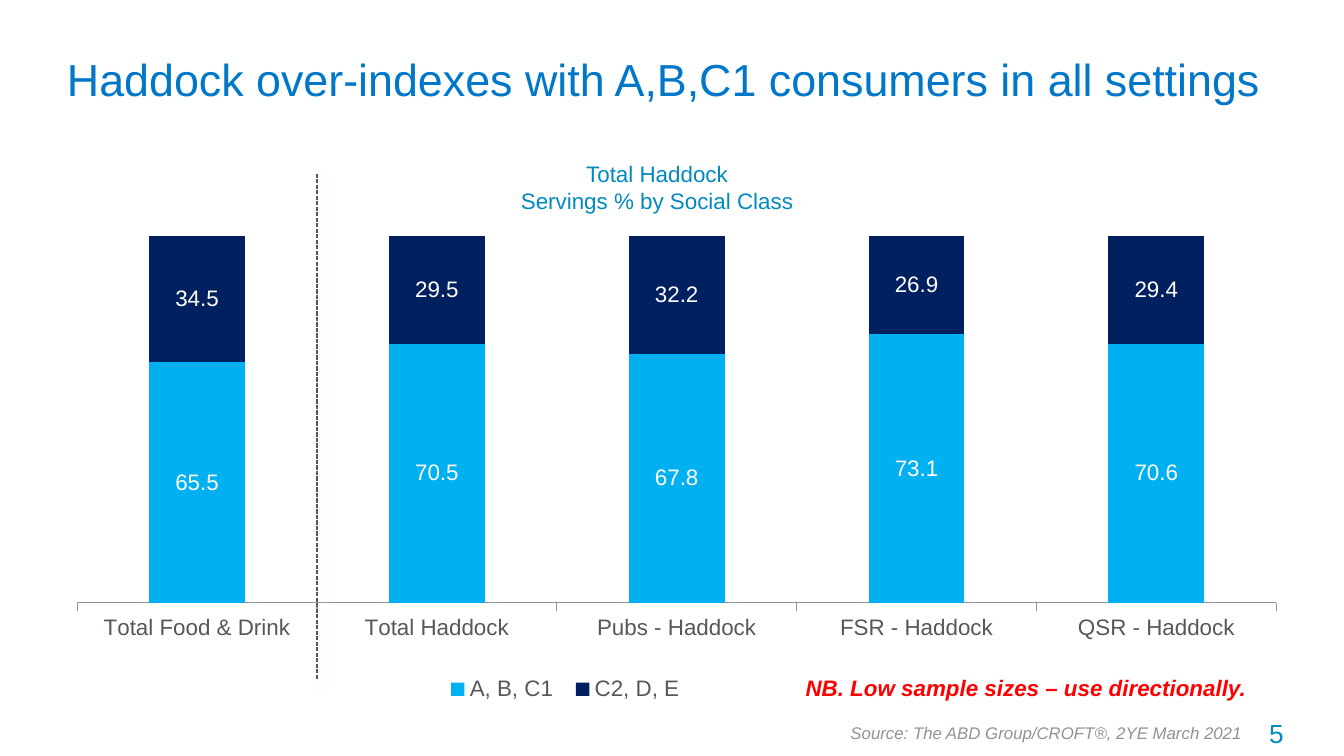
from lxml import etree
from pptx import Presentation
from pptx.chart.data import CategoryChartData
from pptx.dml.color import RGBColor
from pptx.enum import chart as ch, dml, shapes, text
from pptx.oxml import ns
from pptx.util import Inches, Pt

COLORS = {
    "title": "0077C8",
    "accent": "008AC0",
    "body": "54585A",
    "source": "8E9396",
    "axis": "8E9396",
    "warning": "FF0000",
    "abc1": "00B0F0",
    "c2de": "002060",
    "white": "FFFFFF",
}
FONT = "Arial"
CATEGORIES = ["Total Food & Drink", "Total Haddock", "Pubs - Haddock",
              "FSR - Haddock", "QSR - Haddock"]
SERIES = [
    ("A, B, C1", "abc1", [65.5, 70.5, 67.8, 73.1, 70.6]),
    ("C2, D, E", "c2de", [34.5, 29.5, 32.2, 26.9, 29.4]),
]
# Chart parts, as fractions of the chart
PLOT_AREA = {"x": 0.019, "y": 0.001, "w": 0.973, "h": 0.776}
LEGEND = {"x": 0.31, "y": 0.92, "w": 0.21, "h": 0.08}
LEFT, CENTER, RIGHT = (text.PP_ALIGN.LEFT, text.PP_ALIGN.CENTER,
                       text.PP_ALIGN.RIGHT)


def rgb(name):
    return RGBColor.from_string(COLORS[name])


def style_font(font, size, color, **flags):
    for key, value in {"name": FONT, "size": Pt(size), **flags}.items():
        setattr(font, key, value)
    font.color.rgb = rgb(color)


def add_text(s, box, lines, size, color, align=LEFT, wrap=True,
             anchor=text.MSO_ANCHOR.TOP, **flags):
    tf = s.shapes.add_textbox(*map(Inches, box)).text_frame
    tf.word_wrap = wrap
    tf.vertical_anchor = anchor
    for i, line in enumerate(lines):
        p = tf.paragraphs[0] if i == 0 else tf.add_paragraph()
        p.alignment = align
        r = p.add_run()
        r.text = line
        style_font(r.font, size, color, **flags)


def set_layout(part, index, fractions, **modes):
    """Place a chart part by hand; index is where its layout belongs."""
    for old in part.findall(ns.qn("c:layout")):
        part.remove(old)
    layout = etree.Element(ns.qn("c:layout"))
    manual = etree.SubElement(layout, ns.qn("c:manualLayout"))
    values = {**modes, "xMode": "edge", "yMode": "edge", **fractions}
    for tag, value in values.items():
        etree.SubElement(manual, ns.qn(f"c:{tag}")).set("val", str(value))
    part.insert(index, layout)


def add_stacked_chart(s, box):
    data = CategoryChartData()
    data.categories = CATEGORIES
    for name, _, values in SERIES:
        data.add_series(name, values)
    chart = s.shapes.add_chart(ch.XL_CHART_TYPE.COLUMN_STACKED_100,
                               *map(Inches, box), data).chart
    style_font(chart.font, 12, "body")
    chart.has_title = False

    # Legend
    chart.has_legend = True
    chart.legend.position = ch.XL_LEGEND_POSITION.BOTTOM
    chart.legend.include_in_layout = False

    # Placement
    chart_xml = chart._chartSpace.chart
    set_layout(chart_xml.plotArea, 0, PLOT_AREA, layoutTarget="inner")
    set_layout(chart_xml.find(ns.qn("c:legend")), 1, LEGEND)

    # Axes
    chart.value_axis.visible = False
    chart.value_axis.has_major_gridlines = False
    axis = chart.category_axis
    axis.major_tick_mark = ch.XL_TICK_MARK.OUTSIDE
    axis.format.line.color.rgb = rgb("axis")
    axis.format.line.width = Pt(0.75)

    # Columns and their labels
    plot = chart.plots[0]
    for key, value in {"gap_width": 150, "overlap": 100,
                       "vary_by_categories": False}.items():
        setattr(plot, key, value)
    for series, (_, color, _) in zip(plot.series, SERIES):
        series.format.fill.solid()
        series.format.fill.fore_color.rgb = rgb(color)
        labels = series.data_labels
        for key, value in {"show_value": True, "number_format": "#,##0.0",
                           "number_format_is_linked": False}.items():
            setattr(labels, key, value)
        style_font(labels.font, 12, "white")


def add_dashed_line(s, x, bottom, top):
    line = s.shapes.add_connector(shapes.MSO_CONNECTOR.STRAIGHT, Inches(x),
                                  Inches(bottom), Inches(x), Inches(top))
    line.line.color.rgb = rgb("body")
    line.line.width = Pt(0.75)
    line.line.dash_style = dml.MSO_LINE.SQUARE_DOT

    # Soft white shadow, down and to the right
    effects = etree.SubElement(line._element.spPr, ns.qn("a:effectLst"))
    shadow = etree.SubElement(effects, ns.qn("a:outerShdw"),
                              blurRad=str(Pt(5)), dist=str(Pt(2.8)),
                              dir=str(45 * 60000))
    etree.SubElement(shadow, ns.qn("a:srgbClr"), val=COLORS["white"])


def main():
    prs = Presentation()
    prs.slide_width = Inches(10)
    prs.slide_height = prs.slide_width * 9 // 16
    s = prs.slides.add_slide(prs.slide_layouts[6])

    # Chart with its heading, and a divider after the benchmark column
    add_stacked_chart(s, (0.4, 1.75, 9.17, 3.52))
    add_text(s, (3.77, 1.14, 2.24, 0.5),
             ["Total Haddock", "Servings % by Social Class"],
             12, "accent", CENTER, wrap=False)
    add_dashed_line(s, 2.36, 5.05, 1.29)

    # Title
    add_text(s, (0.4, 0.23, 9.17, 0.71),
             ["Haddock over-indexes with A,B,C1 consumers in all settings"],
             24, "title", anchor=text.MSO_ANCHOR.MIDDLE)

    # Sample note, source and page number
    add_text(s, (5.7, 4.97, 3.87, 0.3),
             ["NB. Low sample sizes – use directionally."],
             12, "warning", CENTER, bold=True, italic=True)
    add_text(s, (6.23, 5.33, 3.14, 0.25),
             ["Source: The ABD Group/CROFT®, 2YE March 2021"],
             9, "source", wrap=False, italic=True)
    add_text(s, (8.85, 5.29, 0.8, 0.34), ["5"], 14, "accent", RIGHT)

    prs.save("out.pptx")


if __name__ == "__main__":
    main()
